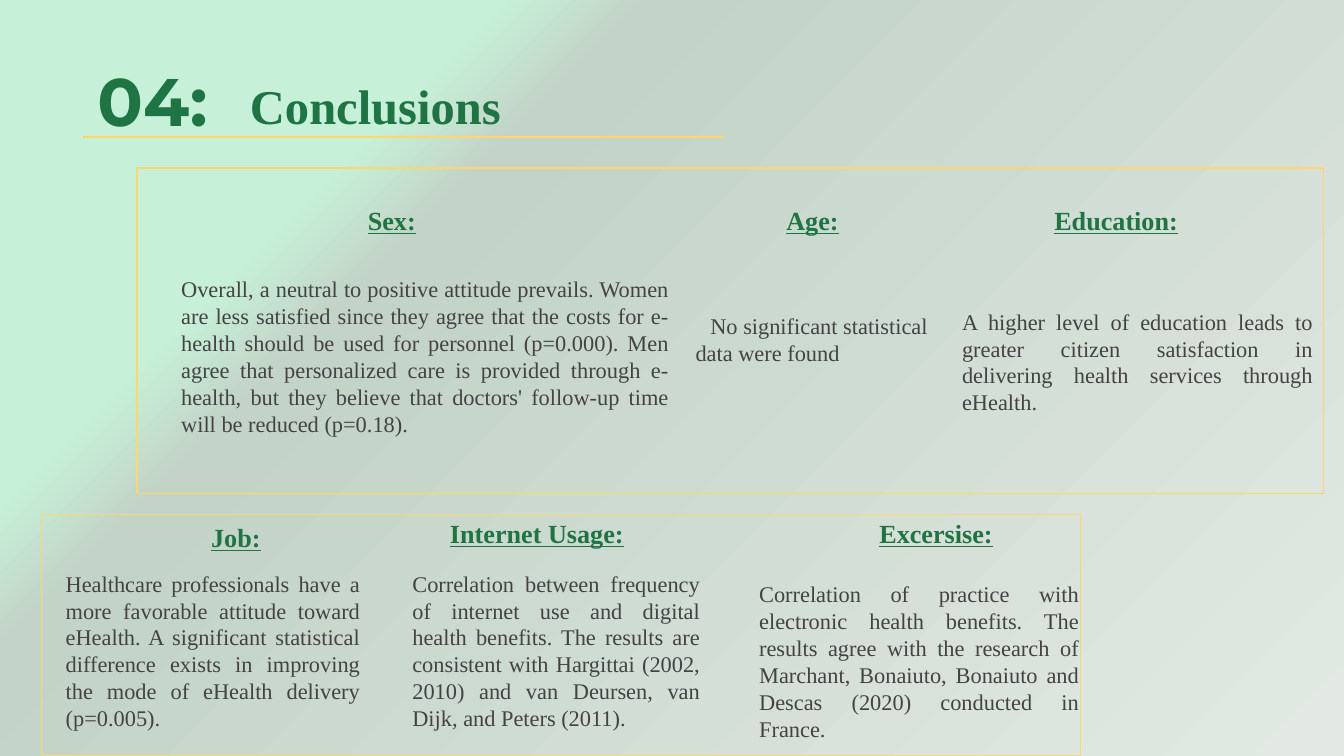
from lxml.etree import SubElement
from pptx import Presentation
from pptx.dml.color import RGBColor
from pptx.enum.shapes import MSO_CONNECTOR, MSO_SHAPE
from pptx.enum.text import MSO_ANCHOR, MSO_AUTO_SIZE, PP_ALIGN
from pptx.oxml.ns import qn
from pptx.util import Inches, Pt

COLORS = {
    "green": "1F7444",
    "text": "434343",
    "yellow": "FBD76D",
    "mint": "C6F0D8",
    "sage": "C3D3C7",
    "mist": "E2E9E4",
}
SERIF = "Times New Roman"


def rgb(name):
    return RGBColor.from_string(COLORS[name])


def write(sp, text, size=12, font=SERIF, color="text", bold=False,
          underline=False, align=PP_ALIGN.LEFT, anchor=MSO_ANCHOR.TOP,
          left=0.1, inset=0.1, tab=None):
    tf = sp.text_frame
    tf.word_wrap = True
    tf.auto_size = MSO_AUTO_SIZE.NONE
    tf.vertical_anchor = anchor
    tf.margin_left = Inches(left)
    tf.margin_right = Inches(0.1)
    tf.margin_top = tf.margin_bottom = Inches(inset)
    p = tf.paragraphs[0]
    p.alignment = align
    if tab:
        tabs = SubElement(p._p.get_or_add_pPr(), qn("a:tabLst"))
        SubElement(tabs, qn("a:tab"), pos=str(Inches(tab)), algn="l")
    r = p.add_run()
    r.text = text
    r.font.name = font
    r.font.size = Pt(size)
    r.font.bold = bold
    r.font.underline = underline
    r.font.color.rgb = rgb(color)


prs = Presentation()
prs.slide_width = Inches(10)
prs.slide_height = Inches(10) * 9 // 16
slide = prs.slides.add_slide(prs.slide_layouts[5])
shapes = slide.shapes

# Diagonal background gradient
fill = slide.background.fill
fill.gradient()
fill.gradient_angle = 315
stops = slide.background._cSld.find(".//" + qn("a:gsLst"))
for stop in list(stops):
    stops.remove(stop)
for position, name in [(24, "mint"), (31, "sage"), (100, "mist")]:
    stop = SubElement(stops, qn("a:gs"), pos=str(position * 1000))
    SubElement(stop, qn("a:srgbClr"), val=COLORS[name])

# Frames around the two rows of findings
for box in [(0.31, 3.83, 7.73, 1.79), (1.02, 1.25, 8.83, 2.42)]:
    frame = shapes.add_shape(MSO_SHAPE.RECTANGLE, *map(Inches, box))
    frame.shadow.inherit = False
    frame.fill.background()
    frame.line.color.rgb = rgb("yellow")
    frame.line.width = Pt(0.75)

# Title, number and rule
title = shapes.title
title.left, title.top = Inches(0.86), Inches(0.47)
title.width, title.height = Inches(8.21), Inches(0.63)
write(title, "Conclusions", size=26, color="green", bold=True,
      anchor=MSO_ANCHOR.MIDDLE, left=1)

number = shapes.add_textbox(Inches(0.55), Inches(0.39), Inches(1.17), Inches(0.71))
write(number, "04:", size=36, font="Montserrat", color="green", bold=True,
      align=PP_ALIGN.CENTER, inset=0.05)

rule = shapes.add_connector(MSO_CONNECTOR.STRAIGHT, Inches(0.62), Inches(1.02),
                            Inches(5.39), Inches(1.02))
rule.line.color.rgb = rgb("yellow")
rule.line.width = Pt(1.5)
SubElement(rule._element.spPr, qn("a:effectLst"))

# Findings: heading and its box, body box, body format, body text
justified = {"align": PP_ALIGN.JUSTIFY}
tabbed = {"align": PP_ALIGN.CENTER, "tab": 1.84}
findings = [
    ("Sex:", (1.89, 1.42, 2.05, 0.66), (1.25, 1.95, 3.83, 1.88), justified,
     "Overall, a neutral to positive attitude prevails. Women are less satisfied "
     "since they agree that the costs for e-health should be used for personnel "
     "(p=0.000). Men agree that personalized care is provided through e-health, "
     "but they believe that doctors' follow-up time will be reduced (p=0.18)."),
    ("Age:", (5.02, 1.42, 2.05, 0.66), (5.07, 2.22, 2.05, 0.91), tabbed,
     "No significant statistical data were found \t"),
    ("Education:", (7.28, 1.42, 2.05, 0.66), (7.06, 2.19, 2.81, 1.19), justified,
     "A higher level of education leads to greater citizen satisfaction in "
     "delivering health services through eHealth."),
    ("Job:", (0.73, 3.78, 2.05, 0.63), (0.39, 4.14, 2.39, 1.17), justified,
     "Healthcare professionals have a more favorable attitude toward eHealth. "
     "A significant statistical difference exists in improving the mode of "
     "eHealth delivery (p=0.005)."),
    ("Internet Usage:", (2.97, 3.75, 2.05, 0.63), (2.97, 4.14, 2.34, 1.48), justified,
     "Correlation between frequency of internet use and digital health benefits. "
     "The results are consistent with Hargittai (2002, 2010) and van Deursen, "
     "van Dijk, and Peters (2011)."),
    ("Excersise:", (5.94, 3.75, 2.05, 0.63), (5.55, 4.22, 2.58, 1.33), justified,
     "Correlation of practice with electronic health benefits. The results agree "
     "with the research of Marchant, Bonaiuto, Bonaiuto and Descas (2020) "
     "conducted in France."),
]
for heading, heading_box, body_box, body_format, body in findings:
    sp = shapes.add_textbox(*map(Inches, heading_box))
    write(sp, heading, size=14, color="green", bold=True, underline=True,
          align=PP_ALIGN.CENTER)
    sp = shapes.add_textbox(*map(Inches, body_box))
    write(sp, body, **body_format)

prs.save("out.pptx")
